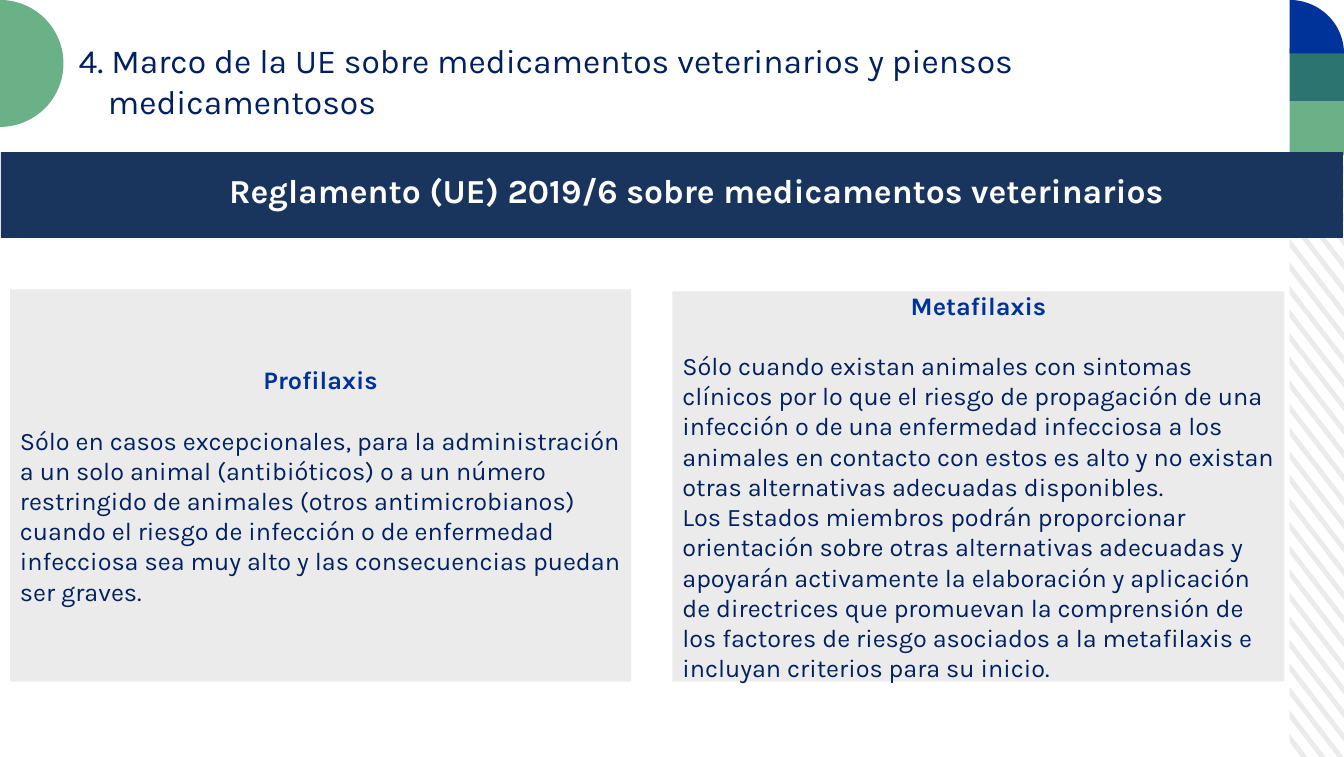
from dataclasses import dataclass
from math import cos, radians, sin

from pptx import Presentation
from pptx.dml.color import RGBColor
from pptx.enum.shapes import MSO_SHAPE
from pptx.enum.text import MSO_ANCHOR, MSO_AUTO_SIZE, PP_ALIGN
from pptx.util import Inches, Pt

TITLE = "4. Marco de la UE sobre medicamentos veterinarios y piensos medicamentosos"
BAND = "Reglamento (UE) 2019/6 sobre medicamentos veterinarios"
PANELS = [
    ("Profilaxis", [
        "Sólo en casos excepcionales, para la administración a un solo animal (antibióticos) "
        "o a un número restringido de animales (otros antimicrobianos) cuando el riesgo de "
        "infección o de enfermedad infecciosa sea muy alto y las consecuencias puedan ser graves.",
    ]),
    ("Metafilaxis", [
        "Sólo cuando existan animales con sintomas clínicos por lo que el riesgo de propagación "
        "de una infección o de una enfermedad infecciosa a los animales en contacto con estos es "
        "alto y no existan otras alternativas adecuadas disponibles.",
        "Los Estados miembros podrán proporcionar orientación sobre otras alternativas adecuadas "
        "y apoyarán activamente la elaboración y aplicación de directrices que promuevan la "
        "comprensión de los factores de riesgo asociados a la metafilaxis e incluyan criterios "
        "para su inicio.",
    ]),
]


@dataclass(frozen=True)
class Theme:
    font: str = "Karla"
    title_size: int = 24
    body_size: int = 18
    heading_gap: float = 21.5
    ink: str = "002060"
    blue: str = "003399"
    band: str = "19355D"
    teal: str = "2C7470"
    green: str = "6BB188"
    grey: str = "ECEBEB"
    white: str = "FFFFFF"


T = Theme()

# Slide grid, in inches
W, H = 13.33, 7.51
SIDE = 12.79                              # left edge of the side column
TILE_W, TILE_H = W - SIDE, 0.53
STRIPES_TOP = 1.54
STRIPE_PITCH, STRIPE_H, STRIPE_DROP = 0.234, 0.08, 0.7
STRIPE_COUNT, LAST_STRIPE = 28, 7.28
DISC = 0.63
TITLE_BOX = (0.68, 0.35, 12.14, 1.0)
HANG = 0.29
BAND_BOX = (0.01, 1.51, 13.31, 0.85)
BAND_TEXT = (0.66, 1.64, 12.49, 0.5)
PANEL_BOTTOM = 6.76
PANEL_SPANS = [(0.1, 2.87, 6.16), (6.67, 2.89, 6.07)]  # left, top, width


def box(*lengths):
    return [Inches(v) for v in lengths]


def paint(shape, color):
    shape.shadow.inherit = False
    shape.fill.solid()
    shape.fill.fore_color.rgb = RGBColor.from_string(color)
    shape.line.fill.background()
    return shape


def add_rect(s, lengths, color):
    return paint(s.shapes.add_shape(MSO_SHAPE.RECTANGLE, *box(*lengths)), color)


def add_outline(s, contours, color):
    """Draw closed contours, given in inches, as one freeform."""
    contours = [[tuple(box(*pt)) for pt in contour] for contour in contours]
    fb = s.shapes.build_freeform(*contours[0][0])
    for i, contour in enumerate(contours):
        if i:
            fb.move_to(*contour[0])
        fb.add_line_segments(contour[1:], close=True)
    paint(fb.convert_to_shape(), color)


def sector(cx, cy, rx, ry, start, end):
    """Points of an elliptic sector, angles clockwise from the right."""
    arc = [(cx + rx * cos(radians(a)), cy + ry * sin(radians(a)))
           for a in range(start, end + 1, 3)]
    return [(cx, cy)] + arc


def clip(points, limit, sign):
    """Keep the part of a polygon where sign * (y - limit) is not negative."""
    kept = []
    for (x0, y0), (x1, y1) in zip(points[-1:] + points[:-1], points):
        d0, d1 = sign * (y0 - limit), sign * (y1 - limit)
        if d0 * d1 < 0:
            kept.append((x0 + (x1 - x0) * d0 / (d0 - d1), limit))
        if d1 >= 0:
            kept.append((x1, y1))
    return kept


def stripe(row):
    y = LAST_STRIPE - row * STRIPE_PITCH
    band = [(SIDE, y), (W, y + STRIPE_DROP),
            (W, y + STRIPE_DROP + STRIPE_H), (SIDE, y + STRIPE_H)]
    return clip(clip(band, STRIPES_TOP, 1), H, -1)


def write(p, text, size, color, bold=False, align=PP_ALIGN.LEFT):
    p.alignment = align
    r = p.add_run()
    r.text = text
    r.font.name, r.font.size, r.font.bold = T.font, Pt(size), bold
    r.font.color.rgb = RGBColor.from_string(color)


def add_decoration(s):
    add_outline(s, [stripe(row) for row in range(STRIPE_COUNT)], T.grey)
    for bottom, color in ((STRIPES_TOP - TILE_H, T.teal), (STRIPES_TOP, T.green)):
        add_rect(s, (SIDE, bottom - TILE_H, TILE_W, TILE_H), color)
    add_outline(s, [sector(SIDE, TILE_H, TILE_W, TILE_H, 270, 360)], T.blue)
    add_outline(s, [sector(0, DISC, DISC, DISC, -90, 90)], T.green)


def add_title(s):
    sp = s.shapes.title
    sp.left, sp.top, sp.width, sp.height = box(*TITLE_BOX)
    tf = sp.text_frame
    tf.auto_size, tf.vertical_anchor = MSO_AUTO_SIZE.NONE, MSO_ANCHOR.TOP
    p = tf.paragraphs[0]
    pPr = p._p.get_or_add_pPr()
    pPr.set("marL", str(Inches(HANG)))
    pPr.set("indent", str(-Inches(HANG)))
    write(p, TITLE, T.title_size, T.ink)


def add_band(s):
    add_rect(s, BAND_BOX, T.band)
    tf = s.shapes.add_textbox(*box(*BAND_TEXT)).text_frame
    tf.word_wrap = True
    write(tf.paragraphs[0], BAND, T.title_size, T.white, True, PP_ALIGN.CENTER)


def add_panel(s, span, heading, texts):
    left, top, width = span
    tf = add_rect(s, (left, top, width, PANEL_BOTTOM - top), T.grey).text_frame
    tf.word_wrap, tf.vertical_anchor = True, MSO_ANCHOR.MIDDLE
    p = tf.paragraphs[0]
    p.space_after = Pt(T.heading_gap)
    write(p, heading, T.body_size, T.blue, True, PP_ALIGN.CENTER)
    for text in texts:
        write(tf.add_paragraph(), text, T.body_size, T.ink)


def main():
    prs = Presentation()
    prs.slide_width, prs.slide_height = box(W, H)
    s = prs.slides.add_slide(prs.slide_layouts[5])
    add_decoration(s)
    add_title(s)
    add_band(s)
    for span, (heading, texts) in zip(PANEL_SPANS, PANELS):
        add_panel(s, span, heading, texts)
    prs.save("out.pptx")


if __name__ == "__main__":
    main()
